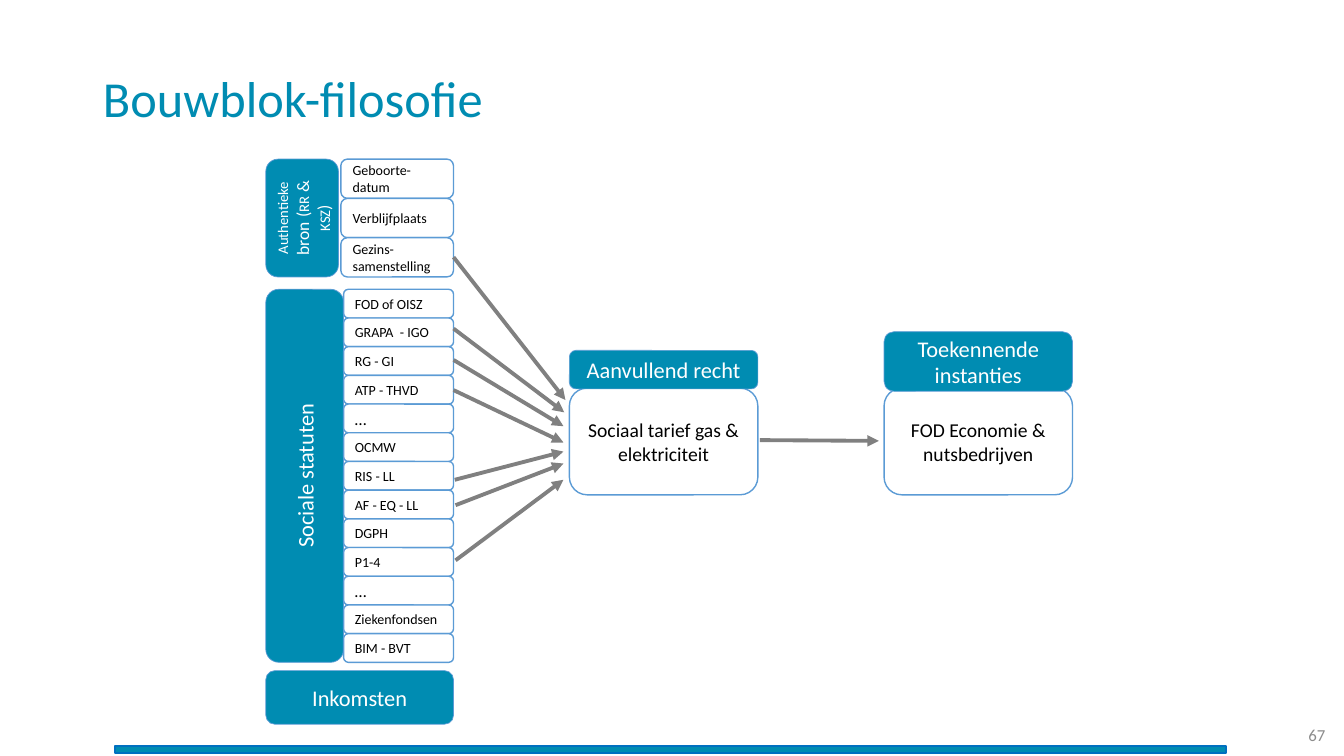
import pptx
import pptx.dml.color
import pptx.enum.shapes
import pptx.enum.text
import pptx.oxml.ns
import pptx.util
from lxml import etree

Cm, Pt = pptx.util.Cm, pptx.util.Pt
Align = pptx.enum.text.PP_ALIGN
Shape = pptx.enum.shapes.MSO_SHAPE

TEAL, BLUE, GREY = "008CB2", "5B9BD5", "808080"
WHITE, BLACK = "FFFFFF", "000000"

TITLE = "Bouwblok-filosofie"
PAGE_NUMBER = "67"
AUTHENTIC_SOURCE = [("Authentieke", 10.5), (" bron (", 12.5), ("RR", 10.5),
                    (" & ", 12.5), ("KSZ", 10.5), (")", 12.5)]
SOURCE_FIELDS = ["Geboorte-datum", "Verblijfplaats", "Gezins-samenstelling"]
STATUSES = ["FOD of OISZ", "GRAPA  - IGO", "RG - GI", "ATP - THVD", "…", "OCMW",
            "RIS - LL", "AF - EQ - LL", "DGPH", "P1-4", "…", "Ziekenfondsen",
            "BIM - BVT"]

# Lengths in centimetres. Block: label, items, top, height, label width, item left
BLOCKS = [
    (AUTHENTIC_SOURCE, SOURCE_FIELDS, 4.01, 2.97, 1.83, 8.59),
    ("Sociale statuten", STATUSES, 7.29, 9.4, 1.96, 8.66),
]
BLOCK_LEFT, BLOCK_RIGHT = 6.7, 11.43
INCOME = ("Inkomsten", 16.9, 1.35)

# Card: heading, body, left, heading top, heading height
CARDS = [
    ("Aanvullend recht", "Sociaal tarief gas & elektriciteit", 14.35, 8.83, 0.97),
    ("Toekennende instanties", "FOD Economie & nutsbedrijven", 22.28, 8.36, 1.5),
]
CARD_WIDTH, CARD_TOP, CARD_HEIGHT = 4.75, 9.78, 2.69

# Arrow: start x, start y, end x, end y
ARROWS = [
    (11.43, 6.48, 14.25, 10.08),
    (11.43, 8.28, 14.22, 10.39),
    (11.43, 9.07, 14.2, 10.74),
    (11.43, 9.83, 14.2, 11.15),
    (11.46, 12.09, 14.2, 11.38),
    (11.48, 12.73, 14.2, 11.68),
    (11.48, 14.12, 14.2, 12.09),
    (19.15, 11.09, 22.15, 11.11),
]


def rgb(value):
    return pptx.dml.color.RGBColor.from_string(value)


def write(shape, text, size=10, color=BLACK, align=Align.LEFT, spacing=None, vertical=False):
    """Fill a shape with a string, or with a list of (string, size) spans."""
    frame = shape.text_frame
    frame.word_wrap = True
    frame.vertical_anchor = pptx.enum.text.MSO_ANCHOR.MIDDLE
    if vertical:
        frame._txBody.bodyPr.set("vert", "vert270")
    para = frame.paragraphs[0]
    para.alignment = align
    para.line_spacing = spacing
    for words, points in [(text, size)] if isinstance(text, str) else text:
        span = para.add_run()
        span.text = words
        span.font.name = "Calibri"
        span.font.size = Pt(points)
        span.font.color.rgb = rgb(color)


def add_box(page, left, top, width, height, fill=WHITE, line=BLUE, weight=1,
            kind=Shape.ROUNDED_RECTANGLE):
    box = page.shapes.add_shape(kind, Cm(left), Cm(top), Cm(width), Cm(height))
    box.shadow.inherit = False
    box.fill.solid()
    box.fill.fore_color.rgb = rgb(fill)
    box.line.color.rgb = rgb(line)
    box.line.width = Pt(weight)
    return box


def add_label(page, text, left, top, width, height, vertical=False):
    box = add_box(page, left, top, width, height, fill=TEAL, weight=0.5)
    write(box, text, size=16, color=WHITE, align=Align.CENTER, vertical=vertical)


def add_block(page, label, items, top, height, label_width, item_left):
    """Vertical label with its items stacked evenly to the right."""
    add_label(page, label, BLOCK_LEFT, top, label_width, height, vertical=True)
    row = height / len(items)
    for index, item in enumerate(items):
        box = add_box(page, item_left, top + index * row, BLOCK_RIGHT - item_left, row)
        write(box, item, size=12 if item == "…" else 10)


def add_card(page, heading, body, left, top, height):
    box = add_box(page, left, CARD_TOP, CARD_WIDTH, CARD_HEIGHT)
    write(box, body, size=14, align=Align.CENTER)
    add_label(page, heading, left, top, CARD_WIDTH, height)


def add_arrow(page, *ends):
    arrow = page.shapes.add_connector(pptx.enum.shapes.MSO_CONNECTOR.STRAIGHT,
                                      *[Cm(end) for end in ends])
    arrow.line.color.rgb = rgb(GREY)
    arrow.line.width = Pt(2.75)
    qn = pptx.oxml.ns.qn
    etree.SubElement(arrow.line._get_or_add_ln(), qn("a:tailEnd"), type="triangle")
    etree.SubElement(arrow._element.spPr, qn("a:effectLst"))


def main():
    deck = pptx.Presentation()
    deck.slide_width, deck.slide_height = Cm(33.87), Cm(19.05)
    page = deck.slides.add_slide(deck.slide_layouts.get_by_name("Title Only"))

    title = page.shapes.title
    title.left, title.top, title.width, title.height = Cm(2.34), Cm(0.71), Cm(29.21), Cm(3.68)
    write(title, TITLE, size=36, color=TEAL, spacing=0.9)

    number = page.shapes.add_textbox(Cm(31.57), Cm(18.01), Cm(2.08), Cm(1.02))
    write(number, PAGE_NUMBER, size=12, color="8C8C8C", align=Align.RIGHT)
    add_box(page, 2.9, 18.8, 28, 0.18, fill=TEAL, line="0070C0", kind=Shape.RECTANGLE)

    for block in BLOCKS:
        add_block(page, *block)
    income, top, height = INCOME
    add_label(page, income, BLOCK_LEFT, top, BLOCK_RIGHT - BLOCK_LEFT, height)
    for card in CARDS:
        add_card(page, *card)
    for arrow in ARROWS:
        add_arrow(page, *arrow)

    deck.save("out.pptx")


if __name__ == "__main__":
    main()
